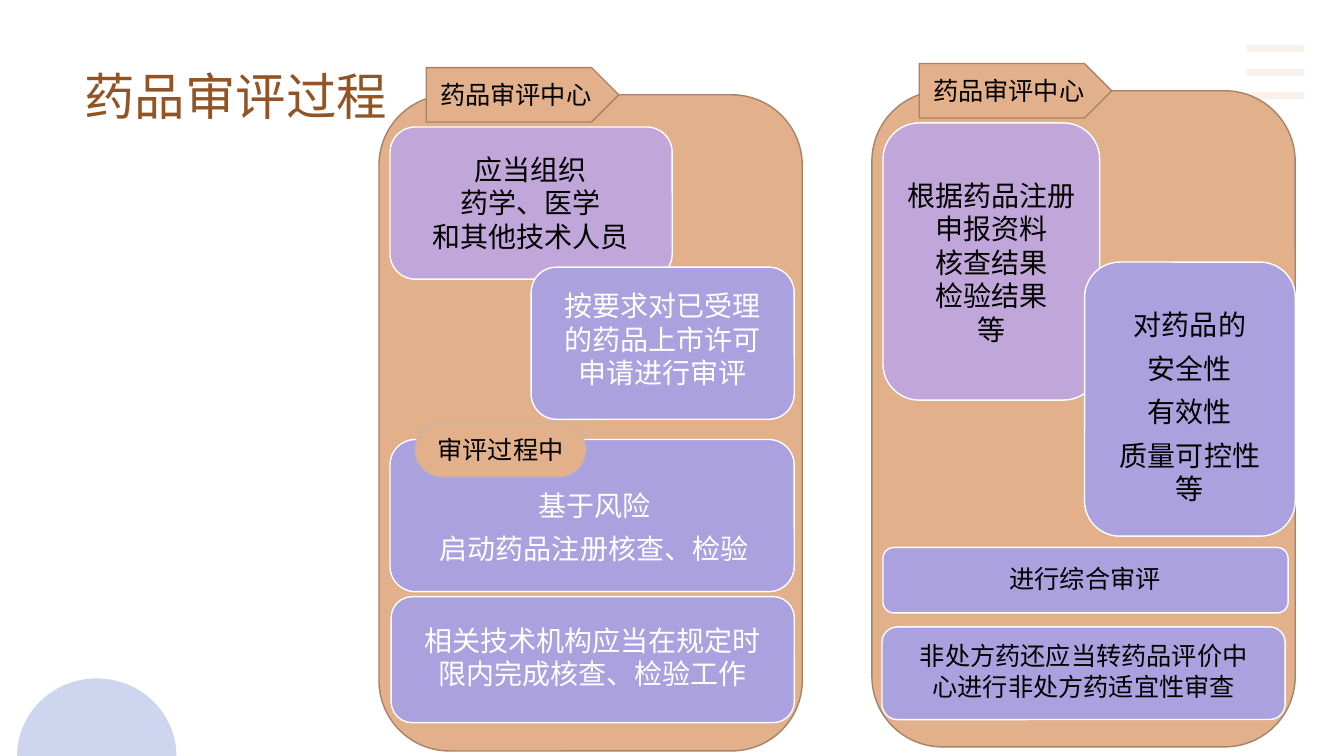
from math import cos, pi, sin
from lxml.etree import SubElement
from pptx import Presentation
from pptx.dml.color import RGBColor
from pptx.enum.shapes import MSO_CONNECTOR, MSO_SHAPE as Shape
from pptx.enum.text import MSO_ANCHOR as Anchor, PP_ALIGN as Align
from pptx.oxml.ns import qn
from pptx.util import Pt

THEME = {
    "font": "Noto Sans CJK SC",
    "title": "925424", "sand": "E2B08A", "sand_edge": "A78266", "badge_edge": "CAB4A3",
    "plum": "C1A6D9", "lavender": "ABA1DE", "dome": "9FAEE0",
    "black": "000000", "white": "FFFFFF",
    "title_size": 36, "large": 20, "label": 18,
}

TITLE = ("药品审评过程", (53.3, 48.2, 676.8, 103.7))
TAG = "药品审评中心"
PANEL_SIZE = (302.4, 468.7)
TAG_OFFSET, TAG_SIZE = (33.8, -19.4), (137.5, 38.9)

COLUMNS = [
    {
        "origin": (270.7, 67.7),
        "cards": [
            (["应当组织", "药学、医学", "和其他技术人员"], "plum", "black", "large", 0,
             (278.6, 90.7, 201.6, 108.7), (285.1, 95.8, 187.9, 97.9)),
            (["按要求对已受理的药品上市许可申请进行审评"], "lavender", "white", "large", 7,
             (379.4, 190.8, 187.9, 108.7), (385.2, 195.8, 175.7, 92.9)),
            (["基于风险", "启动药品注册核查、检验"], "lavender", "white", "large", 7,
             (278.6, 313.9, 288.7, 108.7), (289.4, 329.8, 270, 92.9)),
            (["相关技术机构应当在规定时限内完成核查、检验工作"], "lavender", "white", "large", 7,
             (279.4, 426.2, 288, 90), (288.7, 430.6, 269.3, 77)),
        ],
        "badge": ("审评过程中", (296.6, 301.7, 121.7, 38.9)),
    },
    {
        "origin": (622.8, 64.8),
        "cards": [
            (["根据药品注册", "申报资料", "核查结果", "检验结果", "等"], "plum", "black", "large", 0,
             (630.7, 87.8, 154.8, 198), (635.8, 97.9, 144.7, 178.6)),
            (["对药品的", "安全性", "有效性", "质量可控性等"], "lavender", "black", "large", 7,
             (774.7, 187.2, 150.5, 195.8), (779.8, 198, 140.4, 185)),
            (["非处方药还应当转药品评价中心进行非处方药适宜性审查"], "lavender", "black", "label", 6.3,
             (630, 447.8, 288, 66.2), (639.4, 450.7, 269.3, 56.9)),
            (["进行综合审评"], "lavender", "black", "label", 6.3,
             (630.7, 391, 289.4, 46.8), (640.1, 393.1, 270, 40.3)),
        ],
        "badge": None,
    },
]

BARS = {"left": 890.6, "right": 931.7, "top": 34.5, "step": 17, "count": 3, "weight": 5, "alpha": 16}
DOME = {"center": (69.1, 540), "radii": (56.9, 55.4), "steps": 90, "alpha": 50}


def color(key):
    return RGBColor.from_string(THEME[key])


def points(box):
    return [Pt(value) for value in box]


def set_alpha(part, percent):
    for tint in part._element.spPr.iter(qn("a:srgbClr")):
        SubElement(tint, qn("a:alpha")).set("val", str(percent * 1000))


def write(holder, lines, ink, size, align=Align.CENTER, anchor=Anchor.MIDDLE,
          spacing=1.0, after=0, inset=None):
    frame = holder.text_frame
    frame.word_wrap = True
    frame.vertical_anchor = anchor
    if inset is not None:
        frame.margin_left = frame.margin_right = Pt(inset)
        frame.margin_top = frame.margin_bottom = Pt(inset)
    for index, line in enumerate(lines):
        paragraph = frame.add_paragraph() if index else frame.paragraphs[0]
        paragraph.text = line
        paragraph.alignment = align
        paragraph.line_spacing = spacing
        paragraph.space_after = Pt(after)
        paragraph.font.size = Pt(THEME[size])
        paragraph.font.color.rgb = color(ink)
        paragraph.font.name = THEME["font"]
        defaults = paragraph._p.pPr.find(qn("a:defRPr"))
        SubElement(defaults, qn("a:ea")).set("typeface", THEME["font"])


def block(slide, preset, box, fill, edge):
    shape = slide.shapes.add_shape(preset, *points(box))
    shape.shadow.inherit = False
    shape.fill.solid()
    shape.fill.fore_color.rgb = color(fill)
    shape.line.color.rgb = color(edge)
    shape.line.width = Pt(1)
    return shape


def draw_bars(slide):
    for index in range(BARS["count"]):
        y = BARS["top"] + index * BARS["step"]
        bar = slide.shapes.add_connector(
            MSO_CONNECTOR.STRAIGHT, *points((BARS["left"], y, BARS["right"], y)))
        bar.line.color.rgb = color("sand")
        bar.line.width = Pt(BARS["weight"])
        set_alpha(bar, BARS["alpha"])
        SubElement(bar._element.spPr, qn("a:effectLst"))


def draw_dome(slide):
    (cx, cy), (rx, ry) = DOME["center"], DOME["radii"]
    angles = [pi * step / DOME["steps"] for step in range(DOME["steps"] + 1)]
    arc = [(Pt(cx - rx * cos(a)), Pt(cy - ry * sin(a))) for a in angles]
    outline = slide.shapes.build_freeform(*arc[0])
    outline.add_line_segments(arc[1:], close=True)
    dome = outline.convert_to_shape()
    dome.shadow.inherit = False
    dome.fill.solid()
    dome.fill.fore_color.rgb = color("dome")
    set_alpha(dome, DOME["alpha"])
    dome.line.fill.background()


def draw_column(slide, column):
    left, top = column["origin"]
    block(slide, Shape.ROUNDED_RECTANGLE, (left, top, *PANEL_SIZE), "sand", "sand_edge")
    tag_box = (left + TAG_OFFSET[0], top + TAG_OFFSET[1], *TAG_SIZE)
    tag = block(slide, Shape.PENTAGON, tag_box, "sand", "sand_edge")
    write(tag, [TAG], "black", "label")
    for lines, fill, ink, size, after, card_box, text_box in column["cards"]:
        block(slide, Shape.ROUNDED_RECTANGLE, card_box, fill, "white")
        wording = slide.shapes.add_textbox(*points(text_box))
        write(wording, lines, ink, size, after=after, inset=10.2)
    if column["badge"]:
        label, badge_box = column["badge"]
        badge = block(slide, Shape.FLOWCHART_TERMINATOR, badge_box, "sand", "badge_edge")
        write(badge, [label], "black", "label")


def main():
    deck = Presentation()
    deck.slide_width, deck.slide_height = Pt(960), Pt(540)
    slide = deck.slides.add_slide(deck.slide_layouts[6])
    draw_bars(slide)
    draw_dome(slide)
    for column in COLUMNS:
        draw_column(slide, column)
    heading, title_box = TITLE
    title = slide.shapes.add_textbox(*points(title_box))
    write(title, [heading], "title", "title_size", Align.LEFT, Anchor.TOP, spacing=0.9)
    deck.save("out.pptx")


if __name__ == "__main__":
    main()
